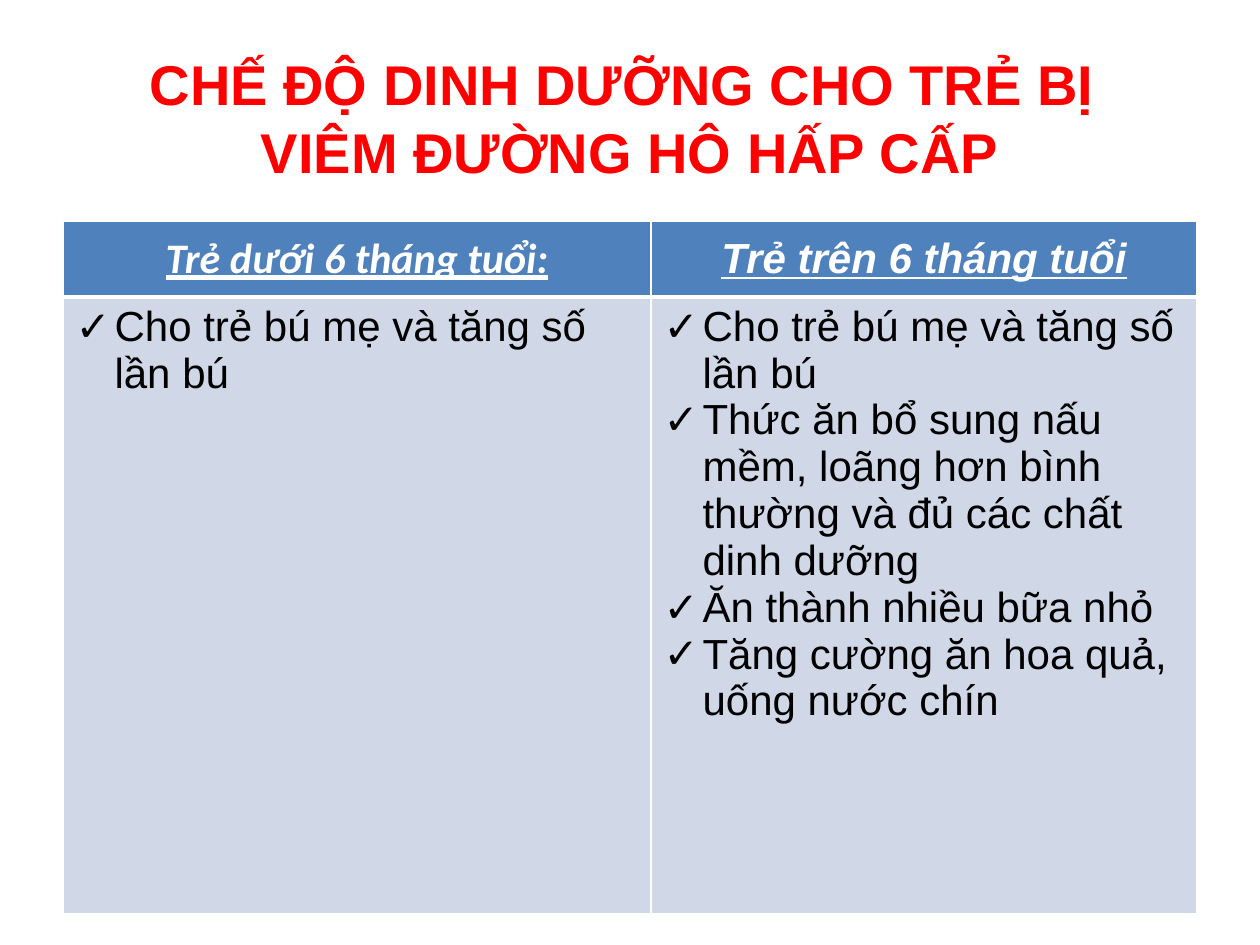
import pptx
import pptx.util
import pptx.dml.color
import pptx.enum.text
import pptx.oxml
import pptx.oxml.ns

TITLE = ["CHẾ ĐỘ DINH DƯỠNG CHO TRẺ BỊ ", "VIÊM ĐƯỜNG HÔ HẤP CẤP"]
AGE_GROUPS = [
    {"heading": "Trẻ dưới 6 tháng tuổi:", "font": "Calibri", "width": 588,
     "advice": ["Cho trẻ bú mẹ và tăng số lần bú"]},
    {"heading": "Trẻ trên 6 tháng tuổi", "font": "Arial", "width": 546,
     "advice": ["Cho trẻ bú mẹ và tăng số lần bú",
                "Thức ăn bổ sung nấu mềm, loãng hơn bình thường và đủ các chất dinh dưỡng",
                "Ăn thành nhiều bữa nhỏ",
                "Tăng cường ăn hoa quả, uống nước chín"]},
]
THEME = {
    "title": "FF0000", "heading": "FFFFFF", "advice": "000000",
    "heading_fill": "4F81BD", "advice_fill": "D0D8E8", "border": "FFFFFF",
    "font": "Arial", "title_size": 32, "table_size": 24,
}
PX_PER_INCH = 126
ROW_HEIGHTS = [76, 617]
LEFT, TABLE_TOP, WIDTH = 63, 221, 1134
INDENT = 39


def px(length):
    return pptx.util.Emu(round(length * 914400 / PX_PER_INCH))


def colour(role):
    return pptx.dml.color.RGBColor.from_string(THEME[role])


def add_text(paragraph, text, role, size, font=THEME["font"], bold=False, accent=False):
    run = paragraph.add_run()
    run.text = text
    run.font.name = font
    run.font.size = pptx.util.Pt(THEME[size])
    run.font.bold = bold
    run.font.italic = run.font.underline = accent
    run.font.color.rgb = colour(role)


def add_check(paragraph):
    properties = paragraph._p.get_or_add_pPr()
    properties.set("marL", str(px(INDENT)))
    properties.set("indent", str(-px(INDENT)))
    for tag, key, value in [("buFont", "typeface", THEME["font"]), ("buChar", "char", "✓")]:
        bullet = pptx.oxml.parse_xml(f'<a:{tag} {pptx.oxml.ns.nsdecls("a")} {key}="{value}"/>')
        properties.append(bullet)


def style_cell(cell, fill, top, bottom):
    properties = cell._tc.get_or_add_tcPr()
    for side, points in [("L", 1), ("R", 1), ("T", top), ("B", bottom)]:
        properties.append(pptx.oxml.parse_xml(
            f'<a:ln{side} {pptx.oxml.ns.nsdecls("a")} w="{pptx.util.Pt(points)}">'
            f'<a:solidFill><a:srgbClr val="{THEME["border"]}"/></a:solidFill></a:ln{side}>'))
    cell.fill.solid()
    cell.fill.fore_color.rgb = colour(fill)


def add_title(slide):
    frame = slide.shapes.add_textbox(px(LEFT), px(38), px(WIDTH), px(158)).text_frame
    frame.word_wrap = True
    frame.vertical_anchor = pptx.enum.text.MSO_ANCHOR.MIDDLE
    paragraph = frame.paragraphs[0]
    paragraph.alignment = pptx.enum.text.PP_ALIGN.CENTER
    for index, line in enumerate(TITLE):
        if index:
            paragraph.add_line_break()
        add_text(paragraph, line, "title", "title_size", bold=True)


def add_diet_table(slide):
    table = slide.shapes.add_table(len(ROW_HEIGHTS), len(AGE_GROUPS), px(LEFT), px(TABLE_TOP),
                                   px(WIDTH), px(sum(ROW_HEIGHTS))).table
    for row, height in zip(table.rows, ROW_HEIGHTS):
        row.height = px(height)
    for column, group in enumerate(AGE_GROUPS):
        table.columns[column].width = px(group["width"])
        heading, advice = table.cell(0, column), table.cell(1, column)
        style_cell(heading, "heading_fill", 1, 3)
        style_cell(advice, "advice_fill", 3, 1)
        heading.vertical_anchor = pptx.enum.text.MSO_ANCHOR.MIDDLE
        paragraph = heading.text_frame.paragraphs[0]
        paragraph.alignment = pptx.enum.text.PP_ALIGN.CENTER
        add_text(paragraph, group["heading"], "heading", "table_size", group["font"], True, True)
        for index, item in enumerate(group["advice"]):
            frame = advice.text_frame
            paragraph = frame.add_paragraph() if index else frame.paragraphs[0]
            add_check(paragraph)
            add_text(paragraph, item, "advice", "table_size")


def main():
    deck = pptx.Presentation()
    deck.slide_width, deck.slide_height = px(1260), px(945)
    slide = deck.slides.add_slide(deck.slide_layouts[6])
    add_title(slide)
    add_diet_table(slide)
    deck.save("out.pptx")


if __name__ == "__main__":
    main()
